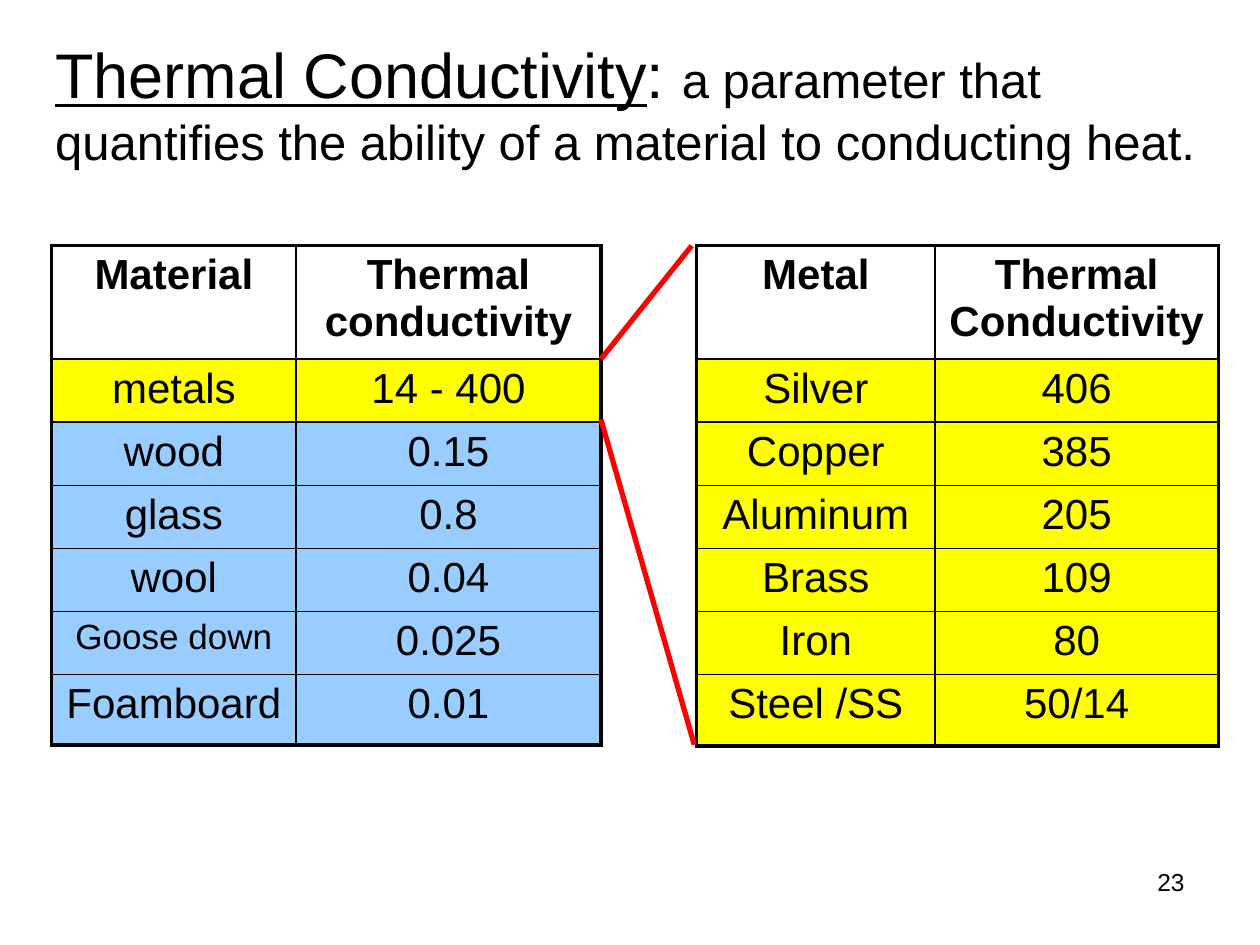
from dataclasses import dataclass

import lxml.etree
import pptx
import pptx.dml.color
import pptx.enum.shapes
import pptx.enum.text
import pptx.oxml.ns
import pptx.util

Inches = pptx.util.Inches
Pt = pptx.util.Pt
Align = pptx.enum.text.PP_ALIGN
qn = pptx.oxml.ns.qn


@dataclass(frozen=True)
class Theme:
    font: str = "Arial"
    ink: str = "000000"
    paper: str = "FFFFFF"
    metal: str = "FFFF00"
    insulator: str = "99CCFF"
    callout: str = "FF0000"
    title_size: int = 36
    subtitle_size: int = 28
    cell_size: int = 24
    small_cell_size: int = 20
    number_size: int = 14
    outer_border: float = 2.25
    inner_border: float = 1
    callout_width: float = 3


THEME = Theme()


@dataclass(frozen=True)
class Row:
    name: str
    value: str
    fill: str
    name_size: int = THEME.cell_size
    bold: bool = False


@dataclass(frozen=True)
class ConductivityTable:
    left: float
    column_widths: tuple[float, float]
    last_height: float
    rows: list[Row]


@dataclass(frozen=True)
class Callout:
    start: tuple[float, float]
    end: tuple[float, float]


TABLE_TOP = 1.95
HEADER_HEIGHT = 0.87
ROW_HEIGHT = 0.5

MATERIALS = ConductivityTable(0.41, (1.94, 2.42), 0.56, [
    Row("Material", "Thermal\nconductivity", THEME.paper, bold=True),
    Row("metals", "14 - 400", THEME.metal),
    Row("wood", "0.15", THEME.insulator),
    Row("glass", "0.8", THEME.insulator),
    Row("wool", "0.04", THEME.insulator),
    Row("Goose down", "0.025", THEME.insulator, THEME.small_cell_size),
    Row("Foamboard", "0.01", THEME.insulator),
])
METALS = ConductivityTable(5.53, (1.89, 2.25), 0.57, [
    Row("Metal", "Thermal\nConductivity", THEME.paper, bold=True),
    Row("Silver", "406", THEME.metal),
    Row("Copper", "385", THEME.metal),
    Row("Aluminum", "205", THEME.metal),
    Row("Brass", "109", THEME.metal),
    Row("Iron", "80", THEME.metal),
    Row("Steel /SS", "50/14", THEME.metal),
])
CALLOUTS = [
    Callout((4.77, 2.85), (5.49, 1.95)),
    Callout((4.77, 3.33), (5.51, 5.91)),
]


def color(value: str):
    return pptx.dml.color.RGBColor.from_string(value)


def format_runs(paragraph, size: int, bold: bool = False) -> None:
    for run in paragraph.runs:
        run.font.name = THEME.font
        run.font.size = Pt(size)
        run.font.bold = bold
        run.font.color.rgb = color(THEME.ink)


def add_text_box(slide, left: float, top: float, width: float, height: float):
    shape = slide.shapes.add_textbox(
        Inches(left), Inches(top), Inches(width), Inches(height))
    shape.text_frame.word_wrap = True
    return shape.text_frame


def add_title(slide) -> None:
    text_frame = add_text_box(slide, 0.34, 0.36, 9.44, 0.91)
    text_frame.vertical_anchor = pptx.enum.text.MSO_ANCHOR.MIDDLE
    paragraph = text_frame.paragraphs[0]
    paragraph.text = "Thermal Conductivity"
    paragraph.add_run().text = ": "
    paragraph.runs[0].font.underline = True
    # The definition follows the term in smaller type
    for index, line in enumerate((
            "a parameter that",
            "quantifies the ability of a material to conducting heat.")):
        if index:
            paragraph.add_line_break()
        paragraph.add_run().text = line
    format_runs(paragraph, THEME.subtitle_size)
    for run in paragraph.runs[:2]:
        run.font.size = Pt(THEME.title_size)


def set_borders(cell, widths: dict[str, float]) -> None:
    properties = cell._tc.get_or_add_tcPr()
    for index, side in enumerate("LRTB"):
        line = lxml.etree.Element(qn(f"a:ln{side}"), w=str(Pt(widths[side])))
        fill = lxml.etree.SubElement(line, qn("a:solidFill"))
        lxml.etree.SubElement(fill, qn("a:srgbClr"), val=THEME.ink)
        properties.insert(index, line)


def fill_cell(cell, text: str, size: int, row: Row) -> None:
    cell.fill.solid()
    cell.fill.fore_color.rgb = color(row.fill)
    paragraph = cell.text_frame.paragraphs[0]
    paragraph.text = text
    paragraph.alignment = Align.CENTER
    format_runs(paragraph, size, row.bold)


def add_conductivity_table(slide, spec: ConductivityTable) -> None:
    count = len(spec.rows)
    heights = [HEADER_HEIGHT] + [ROW_HEIGHT] * (count - 2) + [spec.last_height]
    table = slide.shapes.add_table(
        count, 2, Inches(spec.left), Inches(TABLE_TOP),
        Inches(sum(spec.column_widths)), Inches(sum(heights))).table
    table.first_row = table.horz_banding = False
    for column, width in zip(table.columns, spec.column_widths):
        column.width = Inches(width)
    outer, inner = THEME.outer_border, THEME.inner_border
    for index, (row, height) in enumerate(zip(spec.rows, heights)):
        table.rows[index].height = Inches(height)
        entries = ((row.name, row.name_size), (row.value, THEME.cell_size))
        for column, (text, size) in enumerate(entries):
            cell = table.cell(index, column)
            fill_cell(cell, text, size, row)
            set_borders(cell, {
                "L": outer if column == 0 else inner,
                "R": outer if column == 1 else inner,
                "T": outer if index == 0 else inner,
                "B": outer if index == count - 1 else inner,
            })


def add_callout(slide, callout: Callout) -> None:
    points = [Inches(value) for value in callout.start + callout.end]
    connector = slide.shapes.add_connector(
        pptx.enum.shapes.MSO_CONNECTOR.STRAIGHT, *points)
    connector.line.color.rgb = color(THEME.callout)
    connector.line.width = Pt(THEME.callout_width)
    lxml.etree.SubElement(connector._element.spPr, qn("a:effectLst"))


def add_slide_number(slide) -> None:
    paragraph = add_text_box(slide, 7.17, 6.83, 2.33, 0.52).paragraphs[0]
    paragraph.text = "23"
    paragraph.alignment = Align.RIGHT
    format_runs(paragraph, THEME.number_size)


def main() -> None:
    presentation = pptx.Presentation()
    presentation.slide_width = Inches(10)
    presentation.slide_height = Inches(7.5)
    slide = presentation.slides.add_slide(presentation.slide_layouts[6])

    add_title(slide)
    for spec in (MATERIALS, METALS):
        add_conductivity_table(slide, spec)
    add_slide_number(slide)
    # Lines that open the metals row out into the second table
    for callout in CALLOUTS:
        add_callout(slide, callout)

    presentation.save("out.pptx")


if __name__ == "__main__":
    main()
